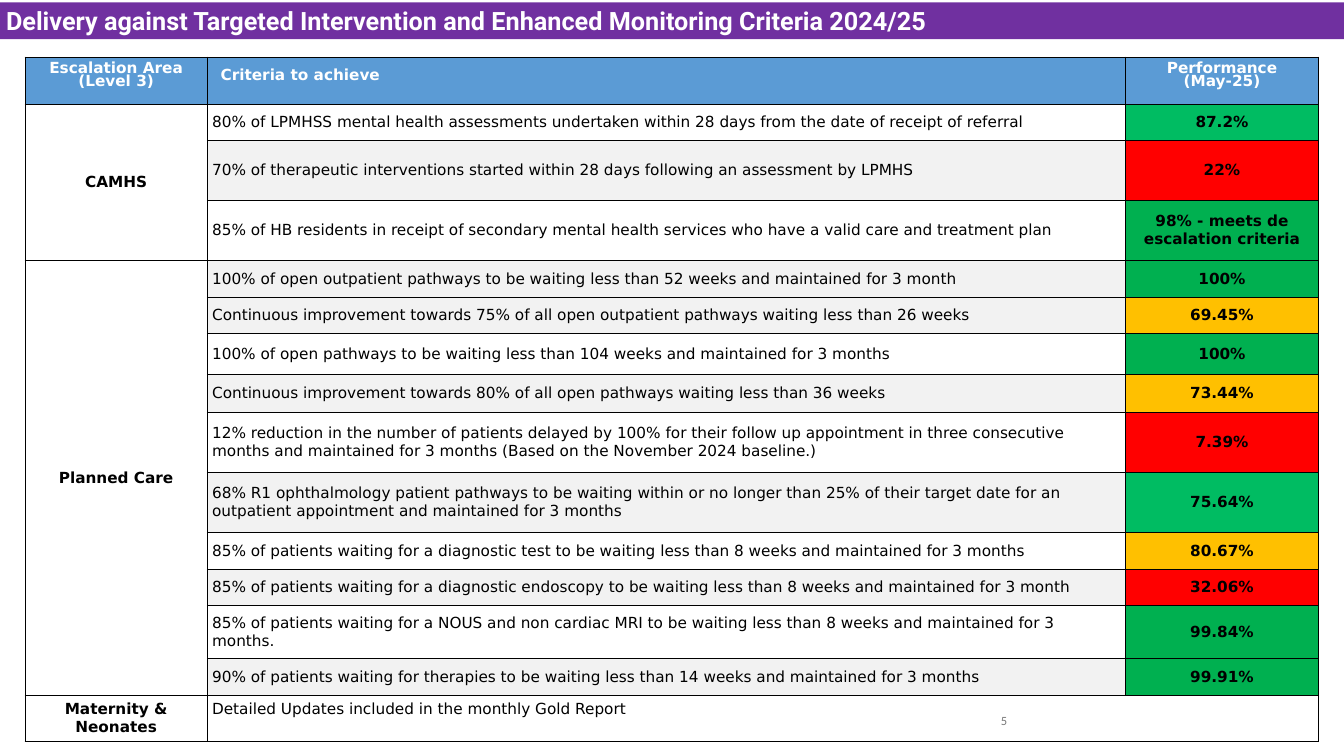
import pptx
import pptx.dml.color
import pptx.enum.shapes
import pptx.enum.text
import pptx.oxml
import pptx.oxml.ns
import pptx.util

Pt = pptx.util.Pt
RGBColor = pptx.dml.color.RGBColor
ALIGN = pptx.enum.text.PP_ALIGN
ANCHOR = pptx.enum.text.MSO_ANCHOR

BLACK = RGBColor(0x00, 0x00, 0x00)
WHITE = RGBColor(0xFF, 0xFF, 0xFF)
PURPLE = RGBColor(0x70, 0x30, 0xA0)
BLUE = RGBColor(0x5B, 0x9B, 0xD5)
SHADE = RGBColor(0xF2, 0xF2, 0xF2)
NUMBER_GREY = RGBColor(0x79, 0x79, 0x79)
MET = RGBColor(0x00, 0xB0, 0x50)
ABOVE_TARGET = RGBColor(0x00, 0xBC, 0x62)
NEAR = RGBColor(0xFF, 0xC0, 0x00)
MISSED = RGBColor(0xFF, 0x00, 0x00)

SLIDE_WIDTH, SLIDE_HEIGHT = 1583.28, 890.64
COLUMN_WIDTHS = [214.6, 1081.4, 228.2]
HEADER_HEIGHT, CLOSING_HEIGHT = 55.4, 54
HEADINGS = [
    (["Escalation Area", "(Level 3)"], ALIGN.CENTER),
    (["Criteria to achieve"], ALIGN.LEFT),
    (["Performance", "(May-25)"], ALIGN.CENTER),
]
AREAS = [
    ("CAMHS", [
        (43.2, WHITE, "80% of LPMHSS mental health assessments undertaken within 28 days from the date of receipt of referral", "87.2%", ABOVE_TARGET),
        (70.6, SHADE, "70% of therapeutic interventions started within 28 days following an assessment by LPMHS", "22%", MISSED),
        (70.6, WHITE, "85% of HB residents in receipt of secondary mental health services who have a valid care and treatment plan", "98% - meets de escalation criteria", MET),
    ]),
    ("Planned Care", [
        (43.2, SHADE, "100% of open outpatient pathways to be waiting less than 52 weeks and maintained for 3 month", "100%", MET),
        (43.2, SHADE, "Continuous improvement towards 75% of all open outpatient pathways waiting less than 26 weeks", "69.45%", NEAR),
        (47.5, WHITE, "100% of open pathways to be waiting less than 104 weeks and maintained for 3 months", "100%", MET),
        (45.4, SHADE, "Continuous improvement towards 80% of all open pathways waiting less than 36 weeks", "73.44%", NEAR),
        (70.6, WHITE, "12% reduction in the number of patients delayed by 100% for their follow up appointment in three consecutive months and maintained for 3 months (Based on the November 2024 baseline.)", "7.39%", MISSED),
        (70.6, SHADE, "68% R1 ophthalmology patient pathways to be waiting within or no longer than 25% of their target date for an outpatient appointment and maintained for 3 months", "75.64%", ABOVE_TARGET),
        (43.2, WHITE, "85% of patients waiting for a diagnostic test to be waiting less than 8 weeks and maintained for 3 months", "80.67%", NEAR),
        (43.2, SHADE, "85% of patients waiting for a diagnostic endoscopy to be waiting less than 8 weeks and maintained for 3 month", "32.06%", MISSED),
        (62.6, WHITE, "85% of patients waiting for a NOUS and non cardiac MRI to be waiting less than 8 weeks and maintained for 3 months.", "99.84%", MET),
        (43.2, SHADE, "90% of patients waiting for therapies to be waiting less than 14 weeks and maintained for 3 months", "99.91%", MET),
    ]),
]


def add_run(paragraph, text, font, size, color, bold=False):
    run = paragraph.add_run()
    run.text = text
    run.font.name = font
    run.font.size = Pt(size)
    run.font.bold = bold
    run.font.color.rgb = color


def set_margins(holder, horizontal, vertical):
    holder.margin_left = holder.margin_right = Pt(horizontal)
    holder.margin_top = holder.margin_bottom = Pt(vertical)


def add_borders(cell):
    properties = cell._tc.get_or_add_tcPr()
    namespace = pptx.oxml.ns.nsdecls("a")
    for position, side in enumerate(("lnL", "lnR", "lnT", "lnB")):
        properties.insert(position, pptx.oxml.parse_xml(
            f'<a:{side} {namespace} w="12700"><a:solidFill>'
            f'<a:srgbClr val="{BLACK}"/></a:solidFill></a:{side}>'))


def write_cell(cell, text, align, bold, anchor=ANCHOR.MIDDLE):
    set_margins(cell, 5.76, 5.76)
    cell.vertical_anchor = anchor
    paragraph = cell.text_frame.paragraphs[0]
    paragraph.alignment = align
    add_run(paragraph, text, "DejaVu Sans", 18, BLACK, bold)


def write_heading(cell, lines, align):
    set_margins(cell, 15.8, 7.9)
    cell.vertical_anchor = ANCHOR.MIDDLE
    cell.fill.solid()
    cell.fill.fore_color.rgb = BLUE
    frame = cell.text_frame
    for index, line in enumerate(lines):
        paragraph = frame.add_paragraph() if index else frame.paragraphs[0]
        paragraph.alignment = align
        paragraph.line_spacing = Pt(8)
        paragraph.space_before = Pt(8 if index else 0)
        add_run(paragraph, line, "DejaVu Sans", 18, WHITE, True)


def add_criteria_table(slide, left, top, width):
    criteria = [criterion for _, group in AREAS for criterion in group]
    heights = [HEADER_HEIGHT, *(criterion[0] for criterion in criteria), CLOSING_HEIGHT]
    table = slide.shapes.add_table(
        len(heights), len(COLUMN_WIDTHS), Pt(left), Pt(top), Pt(width), Pt(sum(heights))).table
    table.first_row = table.horz_banding = False
    for column, column_width in zip(table.columns, COLUMN_WIDTHS):
        column.width = Pt(column_width)
    for row, height in zip(table.rows, heights):
        row.height = Pt(height)
    for cell in table.iter_cells():
        cell.fill.solid()
        cell.fill.fore_color.rgb = WHITE
        add_borders(cell)

    for column, (lines, align) in enumerate(HEADINGS):
        write_heading(table.cell(0, column), lines, align)

    row = 1
    for area, group in AREAS:
        area_cell = table.cell(row, 0)
        area_cell.merge(table.cell(row + len(group) - 1, 0))
        write_cell(area_cell, area, ALIGN.CENTER, True)
        for _, shade, criterion, performance, status in group:
            table.cell(row, 1).fill.fore_color.rgb = shade
            table.cell(row, 2).fill.fore_color.rgb = status
            write_cell(table.cell(row, 1), criterion, ALIGN.LEFT, False)
            write_cell(table.cell(row, 2), performance, ALIGN.CENTER, True)
            row += 1

    write_cell(table.cell(row, 0), "Maternity & Neonates", ALIGN.CENTER, True)
    table.cell(row, 1).merge(table.cell(row, 2))
    write_cell(table.cell(row, 1), "Detailed Updates included in the monthly Gold Report",
               ALIGN.LEFT, False, ANCHOR.TOP)


def add_slide_number(slide, left, top, width, height):
    frame = slide.shapes.add_textbox(Pt(left), Pt(top), Pt(width), Pt(height)).text_frame
    frame.word_wrap = True
    frame.vertical_anchor = ANCHOR.MIDDLE
    set_margins(frame, 11.5, 5.76)
    frame.paragraphs[0].alignment = ALIGN.RIGHT
    add_run(frame.paragraphs[0], "5", "Calibri", 14.8, NUMBER_GREY)


def add_title_band(slide, left, top, width, height):
    band = slide.shapes.add_shape(
        pptx.enum.shapes.MSO_SHAPE.RECTANGLE, Pt(left), Pt(top), Pt(width), Pt(height))
    band.shadow.inherit = False
    band.fill.solid()
    band.fill.fore_color.rgb = PURPLE
    band.line.fill.background()
    frame = band.text_frame
    frame.word_wrap = True
    frame.vertical_anchor = ANCHOR.TOP
    frame.paragraphs[0].alignment = ALIGN.JUSTIFY
    add_run(frame.paragraphs[0],
            "Delivery against Targeted Intervention and Enhanced Monitoring Criteria 2024/25",
            "Roboto", 29.7, WHITE, True)


def main():
    deck = pptx.Presentation()
    deck.slide_width, deck.slide_height = Pt(SLIDE_WIDTH), Pt(SLIDE_HEIGHT)
    slide = deck.slides.add_slide(deck.slide_layouts[6])
    add_criteria_table(slide, 29.5, 67, sum(COLUMN_WIDTHS))
    add_slide_number(slide, 908.6, 825.1, 289.4, 47.5)
    add_title_band(slide, 0, 2.9, SLIDE_WIDTH, 43.2)
    deck.save("out.pptx")


if __name__ == "__main__":
    main()
